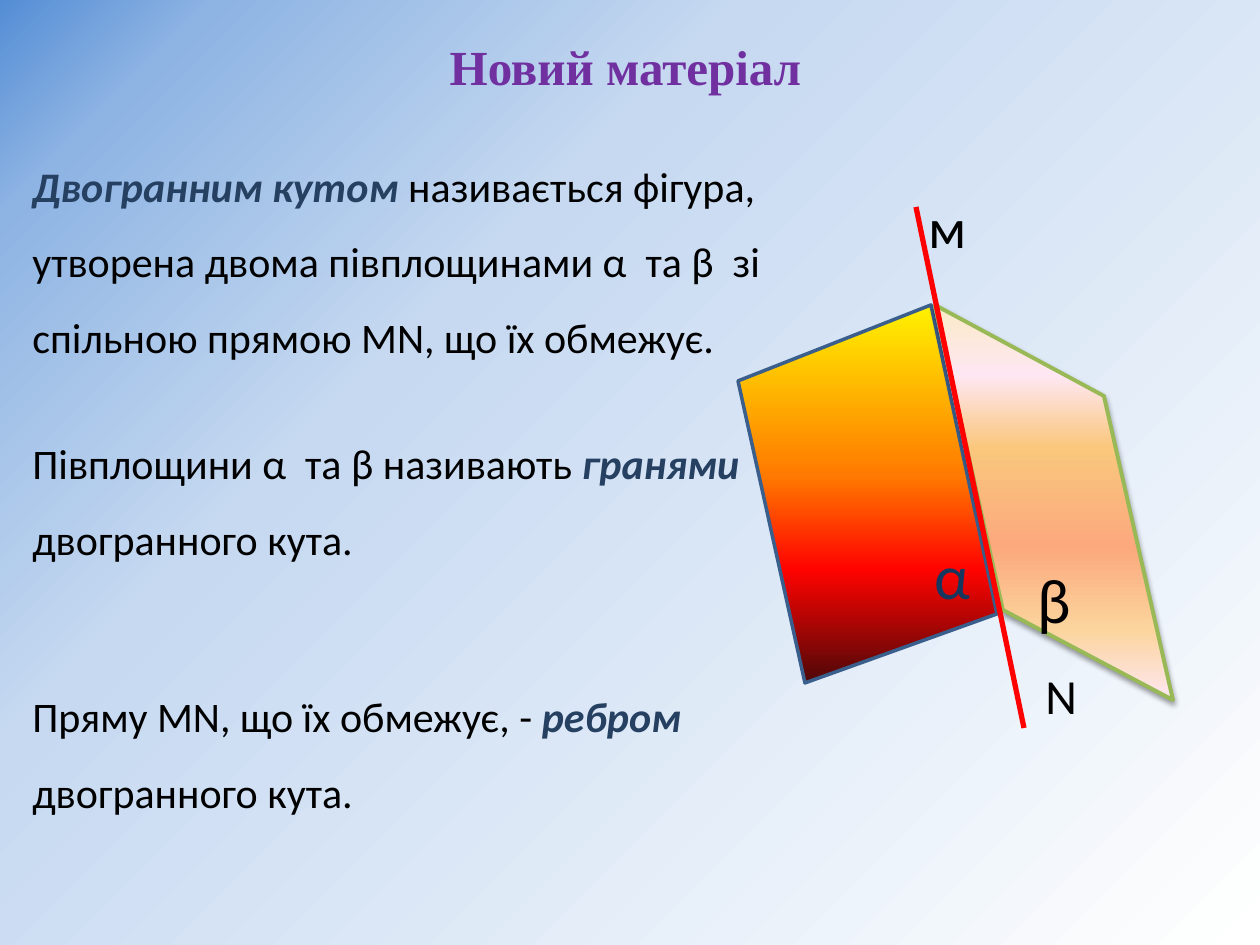
from lxml.etree import SubElement
from pptx import Presentation
from pptx.dml.color import RGBColor
from pptx.enum.shapes import MSO_CONNECTOR
from pptx.enum.text import MSO_AUTO_SIZE, PP_ALIGN
from pptx.oxml.ns import qn
from pptx.util import Pt

PX = 914400 // 126
BLACK = RGBColor(0x00, 0x00, 0x00)
RED = RGBColor(0xFF, 0x00, 0x00)
PURPLE = RGBColor(0x70, 0x30, 0xA0)
NAVY = RGBColor(0x17, 0x37, 0x5E)
TERM_BLUE = RGBColor(0x25, 0x40, 0x61)
ALPHA_EDGE = RGBColor(0x3A, 0x5F, 0x8C)
BETA_EDGE = RGBColor(0x98, 0xB9, 0x55)

SKY = [(0, "558ED5"), (10, "8EB4E3"), (34, "C6D9F1"), (100, "FFFFFF")]
FIRE = [(0, "FFF200"), (45, "FF7A00"), (70, "FF0300"), (100, "4D0808")]
PEACH = [(0, "FBEAC7"), (18, "FEE7F2"), (36, "FAC77D"),
         (61, "FBA97D"), (82, "FBD49C"), (100, "FEE7F2")]


def set_gradient(fill, owner, stops):
    """Fill top to bottom with (percent, hex) stops; return the gradient element."""
    fill.gradient()
    gradient = next(owner.iter(qn("a:gradFill")))
    stop_list = gradient.find(qn("a:gsLst"))
    stop_list.clear()
    for percent, colour in stops:
        stop = SubElement(stop_list, qn("a:gs"), pos=str(percent * 1000))
        SubElement(stop, qn("a:srgbClr"), val=colour)
    gradient.find(qn("a:lin")).set("ang", "5400000")
    return gradient


def add_text(box, paragraphs, inset=True, wrap=True):
    """Add a text box of (paragraph format, [(text, font format, colour)]) items."""
    frame = slide.shapes.add_textbox(*(n * PX for n in box)).text_frame
    frame.word_wrap = wrap
    frame.auto_size = MSO_AUTO_SIZE.SHAPE_TO_FIT_TEXT
    if not inset:
        for side in ("left", "right", "top", "bottom"):
            setattr(frame, f"margin_{side}", 0)
    for i, (layout, runs) in enumerate(paragraphs):
        paragraph = frame.add_paragraph() if i else frame.paragraphs[0]
        for key, value in layout.items():
            setattr(paragraph, key, value)
        for text, font_format, colour in runs:
            run = paragraph.add_run()
            run.text = text
            for key, value in font_format.items():
                setattr(run.font, key, value)
            run.font.color.rgb = colour


prs = Presentation()
prs.slide_width, prs.slide_height = 1260 * PX, 945 * PX
slide = prs.slides.add_slide(prs.slide_layouts[6])

# Background: glow from the top left corner
sky = set_gradient(slide.background.fill, slide._element, SKY)
sky.remove(sky.find(qn("a:lin")))
glow = SubElement(sky, qn("a:path"), path="circle")
SubElement(glow, qn("a:fillToRect"), r="100000", b="100000")

# Half-planes of the dihedral angle
half_planes = [
    ([(738, 381), (805, 683), (997, 614), (931, 305)], FIRE, ALPHA_EDGE, 2),
    ([(1104, 396), (935, 305), (1003, 610), (1173, 700)], PEACH, BETA_EDGE, 2.25),
]
for corners, stops, edge, width in half_planes:
    outline = slide.shapes.build_freeform(*corners[0], scale=PX)
    outline.add_line_segments(corners[1:], close=True)
    half_plane = outline.convert_to_shape()
    half_plane.shadow.inherit = False
    set_gradient(half_plane.fill, half_plane._element, stops)
    half_plane.line.color.rgb = edge
    half_plane.line.width = Pt(width)

# Only the β half-plane, the last one, casts a shadow
effects = half_plane._element.spPr.find(qn("a:effectLst"))
shadow = SubElement(effects, qn("a:outerShdw"), blurRad=str(Pt(3.1)),
                    dist=str(Pt(1.6)), dir="5400000", rotWithShape="0")
shadow_colour = SubElement(shadow, qn("a:srgbClr"), val="000000")
SubElement(shadow_colour, qn("a:alpha"), val="38000")

# Edge MN
edge_mn = slide.shapes.add_connector(
    MSO_CONNECTOR.STRAIGHT, 916 * PX, 207 * PX, 1024 * PX, 728 * PX)
edge_mn.line.color.rgb = RED
edge_mn.line.width = Pt(3)
SubElement(edge_mn._element.spPr, qn("a:effectLst"))

# Labels of the figure
labels = [
    ("α", (935, 537, 40, 77), 36, NAVY, False),
    ("β", (1038, 561, 40, 77), 36, BLACK, False),
    ("м", (916, 186, 64, 81), 32, BLACK, True),
    ("N", (1033, 659, 60, 72), 28, BLACK, True),
]
for label, box, size, colour, inset in labels:
    font = dict(name="Calibri", size=Pt(size))
    add_text(box, [({}, [(label, font, colour)])], inset, wrap=False)

# Definitions
plain = dict(name="Calibri", size=Pt(24))
term = dict(plain, bold=True, italic=True)
definitions = [
    (0, [("Двогранним кутом ", term, TERM_BLUE),
         ("називається фігура, утворена двома півплощинами α  та β  зі "
          "спільною прямою МN, що їх обмежує.", plain, BLACK)]),
    (29, [("Півплощини α  та β називають ", plain, BLACK),
          ("гранями ", term, TERM_BLUE),
          ("двогранного кута.", plain, BLACK)]),
    (58, [("Пряму МN, що їх обмежує, - ", plain, BLACK),
          ("ребром", term, TERM_BLUE),
          (" двогранного кута.", plain, BLACK)]),
]
add_text((20, 129, 781, 878),
         [(dict(line_spacing=1.5, space_before=Pt(gap)), runs)
          for gap, runs in definitions])

# Title
title_font = dict(name="Times New Roman", size=Pt(28), bold=True)
add_text((413, 30, 425, 72),
         [(dict(alignment=PP_ALIGN.CENTER),
           [("Новий матеріал", title_font, PURPLE)])])

prs.save("out.pptx")
